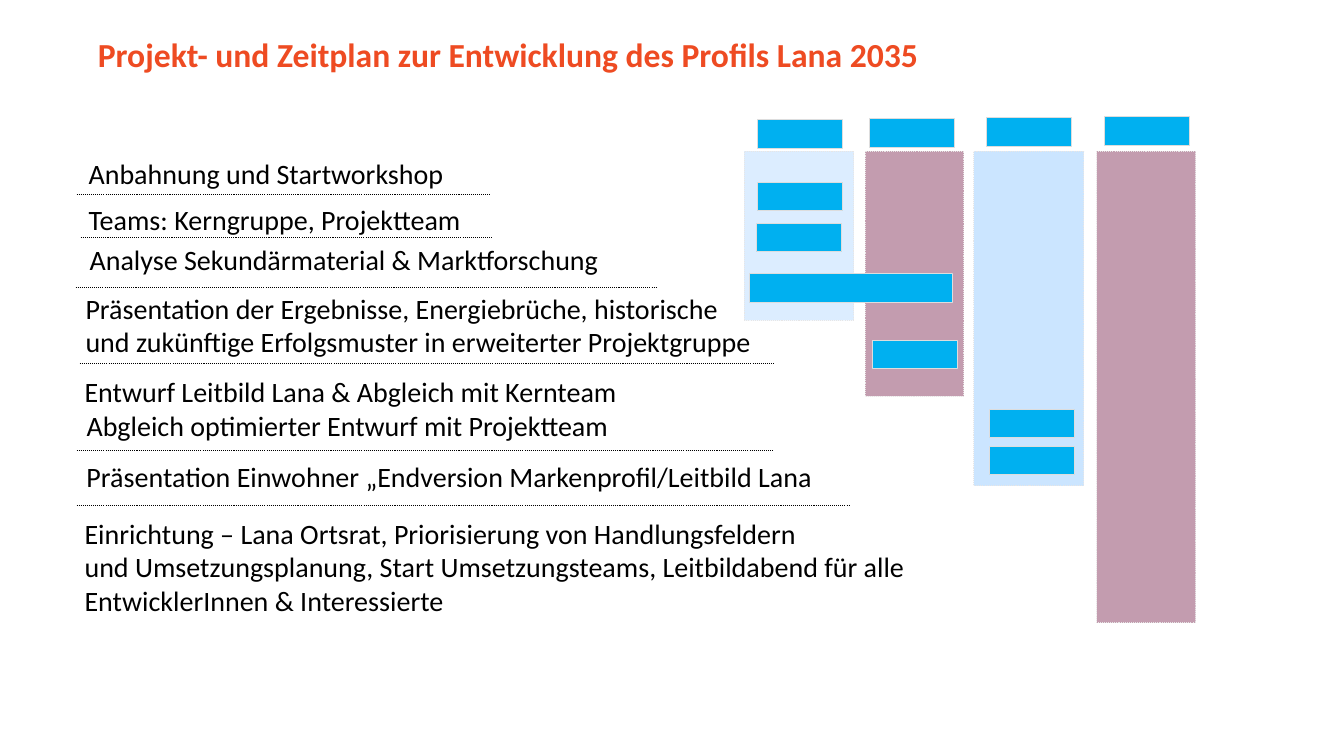
from pptx import Presentation
from pptx.dml.color import RGBColor
from pptx.enum.dml import MSO_LINE
from pptx.enum.shapes import MSO_CONNECTOR, MSO_SHAPE
from pptx.enum.text import MSO_ANCHOR, PP_ALIGN
from pptx.oxml.ns import qn
from pptx.util import Inches, Pt
from lxml.etree import SubElement

TITLE = "Projekt- und Zeitplan zur Entwicklung des Profils Lana 2035"
FONT = "Calibri"
COLORS = {
    "title": "EE4B22", "text": "000000", "blue": "99CCFF", "plum": "954F72",
    "bar": "00B0F0", "column_edge": "E7E6E6", "bar_edge": "DDDDDD",
}

# left, top, width, lines
TASKS = [
    (0.78, 1.5, 3.75, ["Anbahnung und Startworkshop"]),
    (0.78, 1.96, 3.98, ["Teams: Kerngruppe, Projektteam"]),
    (0.79, 2.36, 5.99, ["Analyse Sekundärmaterial & Marktforschung"]),
    (0.75, 2.84, 6.87, ["Präsentation der Ergebnisse, Energiebrüche, historische",
                        "und zukünftige Erfolgsmuster in erweiterter Projektgruppe"]),
    (0.74, 3.67, 6.77, ["Entwurf Leitbild Lana & Abgleich mit Kernteam"]),
    (0.76, 4.0, 5.39, ["Abgleich optimierter Entwurf mit Projektteam"]),
    (0.76, 4.51, 7.9, ["Präsentation Einwohner „Endversion Markenprofil/Leitbild Lana"]),
    (0.74, 5.07, 8.48, ["Einrichtung – Lana Ortsrat, Priorisierung von Handlungsfeldern",
                        "und Umsetzungsplanung, Start Umsetzungsteams, Leitbildabend für alle",
                        "EntwicklerInnen & Interessierte"]),
]
# left, right, y
RULES = [(0.76, 4.86, 1.93), (0.8, 4.89, 2.36), (0.75, 6.51, 2.85),
         (0.79, 7.68, 3.61), (0.76, 7.67, 4.47), (0.76, 8.43, 5.02)]
# left, width, height, color, opacity in percent
COLUMNS = [(7.38, 1.09, 1.68, "blue", 34), (8.58, 0.98, 2.43, "plum", 56),
           (9.66, 1.09, 3.32, "blue", 50), (10.88, 0.98, 4.68, "plum", 56)]
COLUMN_TOP = 1.5
HEADERS = [(7.51, 1.19), (8.62, 1.18), (9.78, 1.17), (10.95, 1.16)]
STEPS = [(7.51, 1.81), (7.5, 2.22), (8.65, 3.38), (9.81, 4.06), (9.81, 4.43)]
BAR_W, BAR_H = 0.85, 0.28
LONG_BAR = (7.43, 2.71, 2.02, 0.29)
LINE_H, INSET = 0.34, 0.05


def rgb(name):
    return RGBColor.from_string(COLORS[name])


def style(p, size, color, bold=False):
    p.font.name, p.font.size, p.font.bold = FONT, Pt(size), bold
    p.font.color.rgb = rgb(color)
    p.alignment = PP_ALIGN.LEFT


def add_task(slide, left, top, width, lines):
    height = len(lines) * LINE_H + 2 * INSET
    tf = slide.shapes.add_textbox(*map(Inches, (left, top, width, height))).text_frame
    tf.word_wrap = False
    tf.text = "\n".join(lines)
    for p in tf.paragraphs:
        style(p, 20, "text")


def add_rule(slide, left, right, y):
    ln = slide.shapes.add_connector(MSO_CONNECTOR.STRAIGHT, *map(Inches, (left, y, right, y)))
    ln.line.color.rgb = rgb("text")
    ln.line.width = Pt(0.75)
    ln.line.dash_style = MSO_LINE.ROUND_DOT
    SubElement(ln._element.spPr, qn("a:effectLst"))


def add_rect(slide, box, fill, edge):
    sp = slide.shapes.add_shape(MSO_SHAPE.RECTANGLE, *map(Inches, box))
    sp.shadow.inherit = False
    sp.fill.solid()
    sp.fill.fore_color.rgb = rgb(fill)
    sp.line.color.rgb = rgb(edge)
    sp.line.width = Pt(0.75)
    return sp


def add_column(slide, left, width, height, fill, opacity):
    sp = add_rect(slide, (left, COLUMN_TOP, width, height), fill, "column_edge")
    sp.line.dash_style = MSO_LINE.ROUND_DOT
    color = sp._element.spPr.find(qn("a:solidFill")).find(qn("a:srgbClr"))
    SubElement(color, qn("a:alpha")).set("val", str(opacity * 1000))


def main():
    prs = Presentation()
    prs.slide_width, prs.slide_height = Inches(13.33), Inches(7.5)
    slide = prs.slides.add_slide(prs.slide_layouts[5])

    title = slide.shapes.title
    title.left, title.top, title.width, title.height = map(Inches, (0.87, 0.29, 8.43, 0.51))
    tf = title.text_frame
    tf.text = TITLE
    tf.word_wrap = False
    tf.vertical_anchor = MSO_ANCHOR.TOP
    style(tf.paragraphs[0], 24, "title", bold=True)

    for task in TASKS:
        add_task(slide, *task)
    for rule in RULES:
        add_rule(slide, *rule)
    for column in COLUMNS:
        add_column(slide, *column)
    bars = [(left, top, BAR_W, BAR_H) for left, top in HEADERS + STEPS]
    for box in bars + [LONG_BAR]:
        add_rect(slide, box, "bar", "bar_edge")

    prs.save("out.pptx")


if __name__ == "__main__":
    main()
